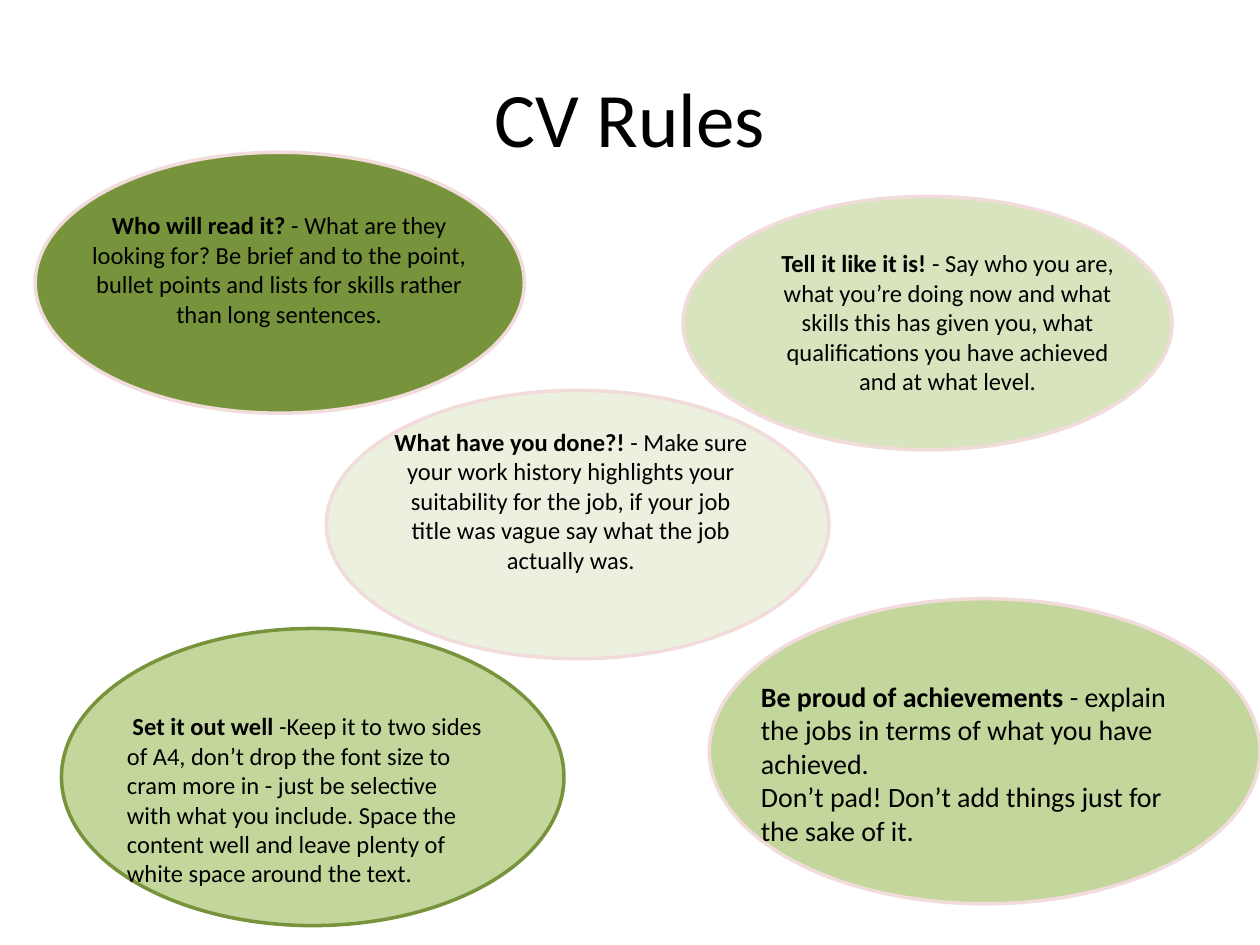
from dataclasses import dataclass

from pptx import Presentation
from pptx import util as u
from pptx.dml import color
from pptx.enum import shapes, text

FONT = "Calibri"
BLACK, WHITE = "000000", "FFFFFF"
OLIVE, ROSE, LEAF = "77933C", "F2DCDB", "C3D69B"
CENTER, LEFT = text.PP_ALIGN.CENTER, text.PP_ALIGN.LEFT


@dataclass
class Area:
    left: float
    top: float
    width: float
    height: float

    def lengths(self) -> list:
        return [u.Cm(n) for n in (self.left, self.top, self.width, self.height)]


@dataclass
class Rule:
    oval: Area
    fill: str
    words: Area
    heading: str
    body: str
    line: str = ROSE
    size: int = 14
    align: text.PP_ALIGN = CENTER
    top_inset: float = 0.13


RULES = [
    Rule(Area(0.71, 3.07, 9.86, 5.26), OLIVE, Area(1.5, 4.11, 8.26, 2.64),
         "Who will read it?",
         " - What are they looking for? Be brief and to the point, "
         "bullet points and lists for skills rather than long sentences."),
    Rule(Area(6.58, 7.87, 10.13, 5.41), "EBF1DE", Area(7.65, 8.48, 7.72, 3.33),
         "What have you done?!",
         " - Make sure your work history highlights your suitability for the job, "
         "if your job title was vague say what the job actually was."),
    Rule(Area(13.77, 3.96, 9.86, 5.11), "D7E4BD", Area(15.37, 4.88, 7.47, 3.33),
         "Tell it like it is!",
         " - Say who you are, what you’re doing now and what skills this has given you, "
         "what qualifications you have achieved and at what level."),
    Rule(Area(14.3, 12.07, 11.1, 6.15), LEAF, Area(15.09, 13.56, 9.32, 3.68),
         "Be proud of achievements",
         " - explain the jobs in terms of what you have achieved.\n"
         "Don’t pad! Don’t add things just for the sake of it.",
         size=16, align=LEFT),
    Rule(Area(1.24, 12.67, 10.13, 5.99), LEAF, Area(2.31, 13.44, 7.72, 4.62),
         " Set it out well",
         " -Keep it to two sides of A4, don’t drop the font size to cram more in - "
         "just be selective with what you include. Space the content well "
         "and leave plenty of white space around the text.",
         line=OLIVE, align=LEFT, top_inset=0.9),
]


def rgb(value: str) -> color.RGBColor:
    return color.RGBColor.from_string(value)


def style(span, size: int, bold: bool = False) -> None:
    span.font.name = FONT
    span.font.size = u.Pt(size)
    span.font.bold = bold
    span.font.color.rgb = rgb(BLACK)


def add_title(page, area: Area, words: str) -> None:
    title = page.shapes.title
    title.left, title.top, title.width, title.height = area.lengths()
    title.text_frame.text = words
    title.text_frame.vertical_anchor = text.MSO_ANCHOR.MIDDLE
    para = title.text_frame.paragraphs[0]
    para.alignment = CENTER
    style(para.runs[0], 44)


def add_oval(page, rule: Rule) -> None:
    oval = page.shapes.add_shape(shapes.MSO_SHAPE.OVAL, *rule.oval.lengths())
    oval.shadow.inherit = False
    oval.fill.solid()
    oval.fill.fore_color.rgb = rgb(rule.fill)
    oval.line.color.rgb = rgb(rule.line)
    oval.line.width = u.Pt(2)


def add_words(page, rule: Rule) -> None:
    box = page.shapes.add_textbox(*rule.words.lengths())
    frame = box.text_frame
    frame.text = rule.body
    frame.word_wrap = True
    frame.auto_size = text.MSO_AUTO_SIZE.SHAPE_TO_FIT_TEXT
    frame.margin_top = u.Cm(rule.top_inset)
    first = frame.paragraphs[0]
    opening = first.text
    first.text = rule.heading
    first.add_run().text = opening
    for para in frame.paragraphs:
        para.alignment = rule.align
        for span in para.runs:
            style(span, rule.size, bold=span.text == rule.heading)


def main() -> None:
    deck = Presentation()
    deck.slide_width, deck.slide_height = u.Cm(25.4), u.Cm(19.05)
    page = deck.slides.add_slide(deck.slide_layouts.get_by_name("Title Only"))
    page.background.fill.solid()
    page.background.fill.fore_color.rgb = rgb(WHITE)
    add_title(page, Area(1.27, 0.76, 22.86, 3.18), "CV Rules")
    for rule in RULES:
        add_oval(page, rule)
        add_words(page, rule)
    deck.save("out.pptx")


if __name__ == "__main__":
    main()
